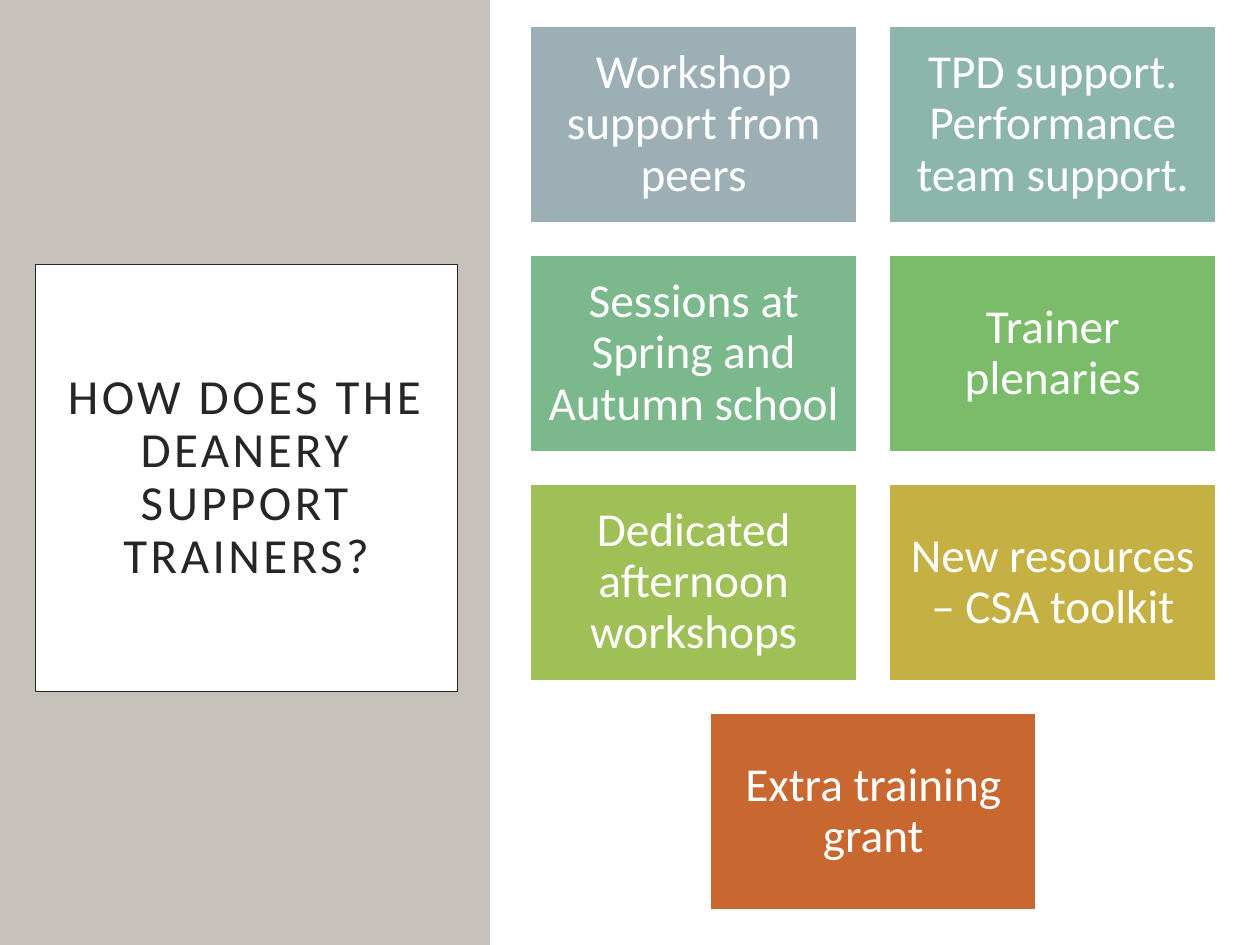
from dataclasses import dataclass

from pptx import Presentation
from pptx.dml.color import RGBColor
from pptx.enum.shapes import MSO_SHAPE
from pptx.enum.text import MSO_ANCHOR, MSO_AUTO_SIZE, PP_ALIGN
from pptx.util import Inches, Pt

WHITE = RGBColor(0xFF, 0xFF, 0xFF)
INK = RGBColor(0x26, 0x26, 0x26)
STONE = RGBColor(0xC6, 0xC1, 0xBA)
SLATE = RGBColor(0x9B, 0xAF, 0xB5)
TEAL = RGBColor(0x8C, 0xB6, 0xAC)
JADE = RGBColor(0x7B, 0xB8, 0x8C)
GREEN = RGBColor(0x7A, 0xBC, 0x69)
LIME = RGBColor(0x9F, 0xC0, 0x57)
GOLD = RGBColor(0xC5, 0xB0, 0x43)
RUST = RGBColor(0xC9, 0x67, 0x31)

# Card grid, in inches
LEFT, TOP = 4.21, 0.21
WIDTH, HEIGHT = 2.59, 1.56
STEP_X, STEP_Y = 2.85, 1.817
COLS = 2


@dataclass
class Card:
    text: str
    fill: RGBColor


CARDS = [
    Card("Workshop support from peers", SLATE),
    Card("TPD support. Performance team support.", TEAL),
    Card("Sessions at Spring and Autumn school", JADE),
    Card("Trainer plenaries", GREEN),
    Card("Dedicated afternoon workshops", LIME),
    Card("New resources – CSA toolkit", GOLD),
    Card("Extra training grant", RUST),
]


def add_rect(slide, x: float, y: float, w: float, h: float, fill: RGBColor):
    """Draw a plain rectangle without outline or shadow."""
    rect = slide.shapes.add_shape(
        MSO_SHAPE.RECTANGLE, Inches(x), Inches(y), Inches(w), Inches(h))
    rect.shadow.inherit = False
    rect.fill.solid()
    rect.fill.fore_color.rgb = fill
    rect.line.fill.background()
    return rect


def set_line(shape, color: RGBColor, width: float) -> None:
    shape.line.color.rgb = color
    shape.line.width = Pt(width)


def set_text(shape, text: str, size: int, color: RGBColor, inset: float):
    """Fill a shape with one centred paragraph and return its run."""
    frame = shape.text_frame
    pad = Inches(inset)
    form = {
        "word_wrap": True, "auto_size": MSO_AUTO_SIZE.NONE,
        "vertical_anchor": MSO_ANCHOR.MIDDLE,
        "margin_left": pad, "margin_right": pad,
        "margin_top": pad, "margin_bottom": pad,
    }
    for name, value in form.items():
        setattr(frame, name, value)
    para = frame.paragraphs[0]
    para.alignment = PP_ALIGN.CENTER
    para.line_spacing = 0.9
    run = para.add_run()
    run.text = text
    for name, value in {"name": "Calibri", "size": Pt(size)}.items():
        setattr(run.font, name, value)
    run.font.color.rgb = color
    return run


def add_card(slide, card: Card, col: float, row: int) -> None:
    rect = add_rect(slide, LEFT + col * STEP_X, TOP + row * STEP_Y,
                    WIDTH, HEIGHT, card.fill)
    set_line(rect, WHITE, 1)
    set_text(rect, card.text, 27, WHITE, 0.11)


def add_title(slide, text: str) -> None:
    title = slide.shapes.title
    place = {"left": 0.28, "top": 2.1, "width": 3.35, "height": 3.39}
    for name, value in place.items():
        setattr(title, name, Inches(value))
    title.fill.solid()
    title.fill.fore_color.rgb = WHITE
    set_line(title, INK, 0.75)
    run = set_text(title, text, 28, INK, 0.2)
    # Letter spacing of 2 points
    run.font._element.set("spc", "200")


def main() -> None:
    deck = Presentation()
    deck.slide_width, deck.slide_height = Inches(10), Inches(7.5)
    slide = deck.slides.add_slide(deck.slide_layouts[5])

    # Side band, moved behind the title
    band = add_rect(slide, 0, 0, 3.89, 7.5, STONE)
    slide.shapes._spTree.insert(2, band._element)
    add_title(slide, "HOW DOES THE DEANERY SUPPORT TRAINERS?")

    # Panel and cards; a lone last card is centred in its row
    add_rect(slide, 3.9, 0, 6.1, 7.5, WHITE)
    for i, card in enumerate(CARDS):
        row, col = divmod(i, COLS)
        count = min(COLS, len(CARDS) - row * COLS)
        add_card(slide, card, col + (COLS - count) / 2, row)

    deck.save("out.pptx")


if __name__ == "__main__":
    main()
